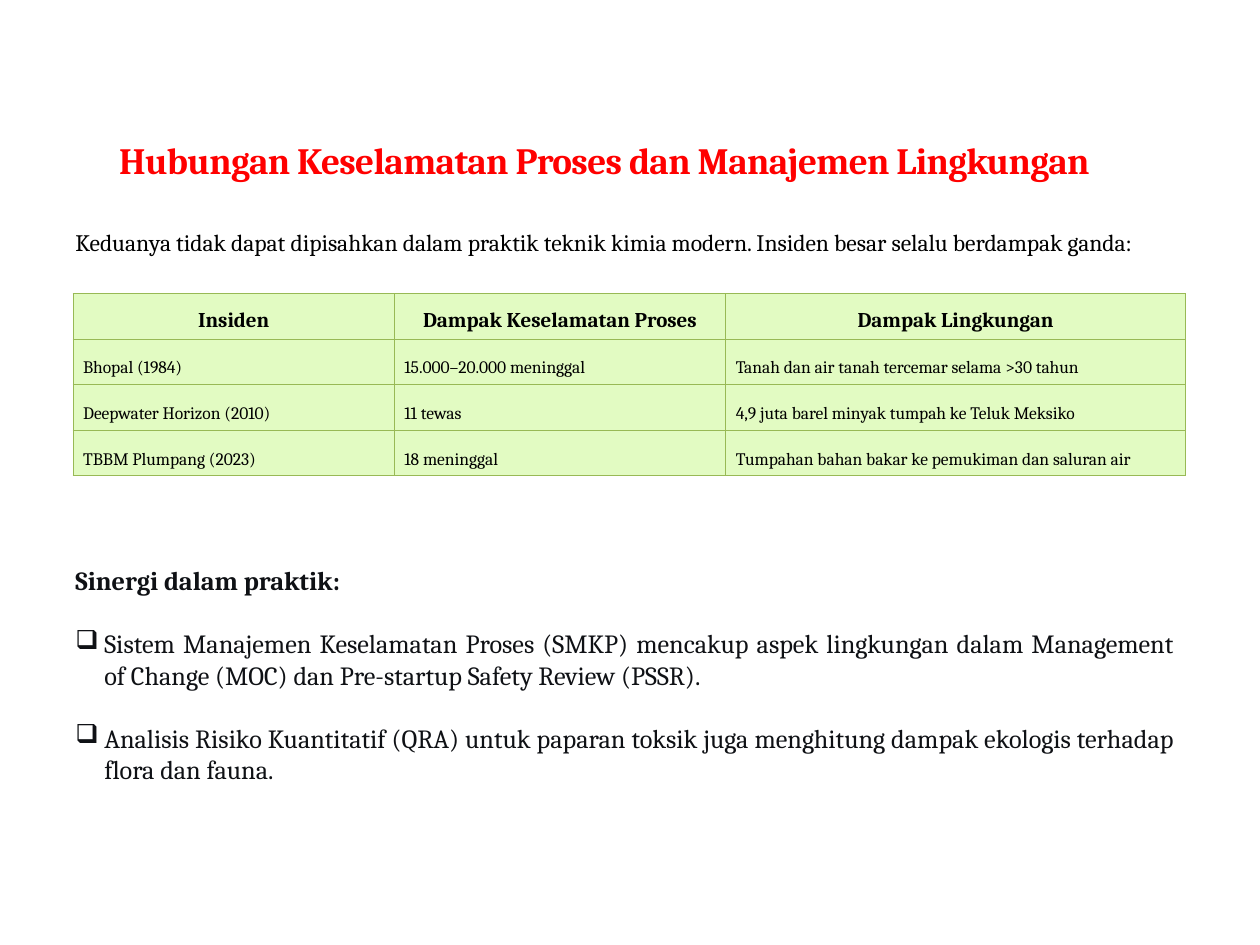
from lxml.etree import SubElement
from pptx import Presentation
from pptx.dml.color import RGBColor
from pptx.enum.text import MSO_ANCHOR, PP_ALIGN
from pptx.oxml.ns import qn
from pptx.util import Inches, Pt

BLACK = RGBColor(0x00, 0x00, 0x00)
INK = RGBColor(0x0F, 0x11, 0x15)
RED = RGBColor(0xFF, 0x00, 0x00)
PALE_GREEN = RGBColor(0xE2, 0xFB, 0xC2)
BORDER_GREEN = RGBColor(0x98, 0xB9, 0x55)
FONT = "Cambria"

SLIDE_WIDTH, SLIDE_HEIGHT = Inches(10), Inches(7.5)
COLUMN, ROW = SLIDE_WIDTH / 100, SLIDE_HEIGHT / 75

# Regions as left, top, width, height in grid columns and rows
INTRO_BOX = (5, 17.6, 90, 5)
TITLE_BOX = (6.7, 8.7, 82.5, 11.9)
SYNERGY_BOX = (5, 44.3, 89.2, 18.7)
TABLE_BOX = (5.8, 23.3, 88.3, 14.4)
TABLE_COLUMNS = (25.5, 26.3, 36.5)

INCIDENTS = [
    ("Insiden", "Dampak Keselamatan Proses", "Dampak Lingkungan"),
    ("Bhopal (1984)", "15.000–20.000 meninggal",
     "Tanah dan air tanah tercemar selama >30 tahun"),
    ("Deepwater Horizon (2010)", "11 tewas",
     "4,9 juta barel minyak tumpah ke Teluk Meksiko"),
    ("TBBM Plumpang (2023)", "18 meninggal",
     "Tumpahan bahan bakar ke pemukiman dan saluran air"),
]
SYNERGIES = [
    "Sistem Manajemen Keselamatan Proses (SMKP) mencakup aspek lingkungan dalam "
    "Management of Change (MOC) dan Pre-startup Safety Review (PSSR).",
    "Analisis Risiko Kuantitatif (QRA) untuk paparan toksik juga menghitung "
    "dampak ekologis terhadap flora dan fauna.",
]


def place(box):
    left, top, width, height = box
    return (round(left * COLUMN), round(top * ROW),
            round(width * COLUMN), round(height * ROW))


def write(paragraph, text, size, color, alignment, bold=False):
    paragraph.text = text
    paragraph.alignment = alignment
    font = paragraph.runs[0].font
    font.name, font.size, font.bold = FONT, Pt(size), bold
    font.color.rgb = color


def add_text_frame(slide, box):
    text_frame = slide.shapes.add_textbox(*place(box)).text_frame
    text_frame.word_wrap = True
    return text_frame


def add_intro(slide, box):
    paragraph = add_text_frame(slide, box).paragraphs[0]
    write(paragraph,
          "Keduanya tidak dapat dipisahkan dalam praktik teknik kimia modern. "
          "Insiden besar selalu berdampak ganda:",
          13.5, BLACK, PP_ALIGN.JUSTIFY)


def add_title(slide, box):
    text_frame = add_text_frame(slide, box)
    text_frame.vertical_anchor = MSO_ANCHOR.BOTTOM
    text_frame.margin_left = text_frame.margin_right = round(0.7 * COLUMN)
    text_frame.margin_bottom = round(6.1 * ROW)
    paragraph = text_frame.paragraphs[0]
    write(paragraph, "Hubungan Keselamatan Proses dan Manajemen Lingkungan",
          21.2, RED, PP_ALIGN.CENTER, bold=True)
    paragraph.line_spacing = 0.9
    paragraph.runs[0].font._element.set("spc", "-40")


def add_bullet(paragraph):
    properties = paragraph._p.get_or_add_pPr()
    indent = round(2.3 * COLUMN)
    properties.set("marL", str(indent))
    properties.set("indent", str(-indent))
    SubElement(properties, qn("a:buChar"), char="❑")


def add_synergies(slide, box):
    text_frame = add_text_frame(slide, box)
    write(text_frame.paragraphs[0], "Sinergi dalam praktik:",
          15, INK, PP_ALIGN.JUSTIFY, bold=True)
    for synergy in SYNERGIES:
        paragraph = text_frame.add_paragraph()
        add_bullet(paragraph)
        write(paragraph, synergy, 15, INK, PP_ALIGN.JUSTIFY)
        paragraph.space_before = Pt(18)


def add_borders(cell):
    properties = cell._tc.get_or_add_tcPr()
    for position, side in enumerate(("a:lnL", "a:lnR", "a:lnT", "a:lnB")):
        line = SubElement(properties, qn(side), w=str(Pt(0.75)))
        fill = SubElement(line, qn("a:solidFill"))
        SubElement(fill, qn("a:srgbClr"), val=str(BORDER_GREEN))
        properties.insert(position, line)  # borders come before the fill


def fill_cell(cell, text, is_header):
    cell.fill.solid()
    cell.fill.fore_color.rgb = PALE_GREEN
    add_borders(cell)
    cell.vertical_anchor = MSO_ANCHOR.MIDDLE
    cell.margin_left = cell.margin_right = round(0.8 * COLUMN)
    cell.margin_top = cell.margin_bottom = round(0.5 * ROW)
    paragraph = cell.text_frame.paragraphs[0]
    write(paragraph, text, 12 if is_header else 10, BLACK,
          PP_ALIGN.CENTER if is_header else PP_ALIGN.LEFT, bold=is_header)
    paragraph.line_spacing = Pt(18.8)


def add_incident_table(slide, box):
    table = slide.shapes.add_table(
        len(INCIDENTS), len(TABLE_COLUMNS), *place(box)).table
    for column, width in zip(table.columns, TABLE_COLUMNS):
        column.width = round(width * COLUMN)
    for row_index, incident in enumerate(INCIDENTS):
        for column_index, text in enumerate(incident):
            fill_cell(table.cell(row_index, column_index), text, row_index == 0)


def main():
    presentation = Presentation()
    presentation.slide_width, presentation.slide_height = SLIDE_WIDTH, SLIDE_HEIGHT
    slide = presentation.slides.add_slide(presentation.slide_layouts[6])
    add_intro(slide, INTRO_BOX)
    add_title(slide, TITLE_BOX)
    add_synergies(slide, SYNERGY_BOX)
    add_incident_table(slide, TABLE_BOX)
    presentation.save("out.pptx")


if __name__ == "__main__":
    main()
